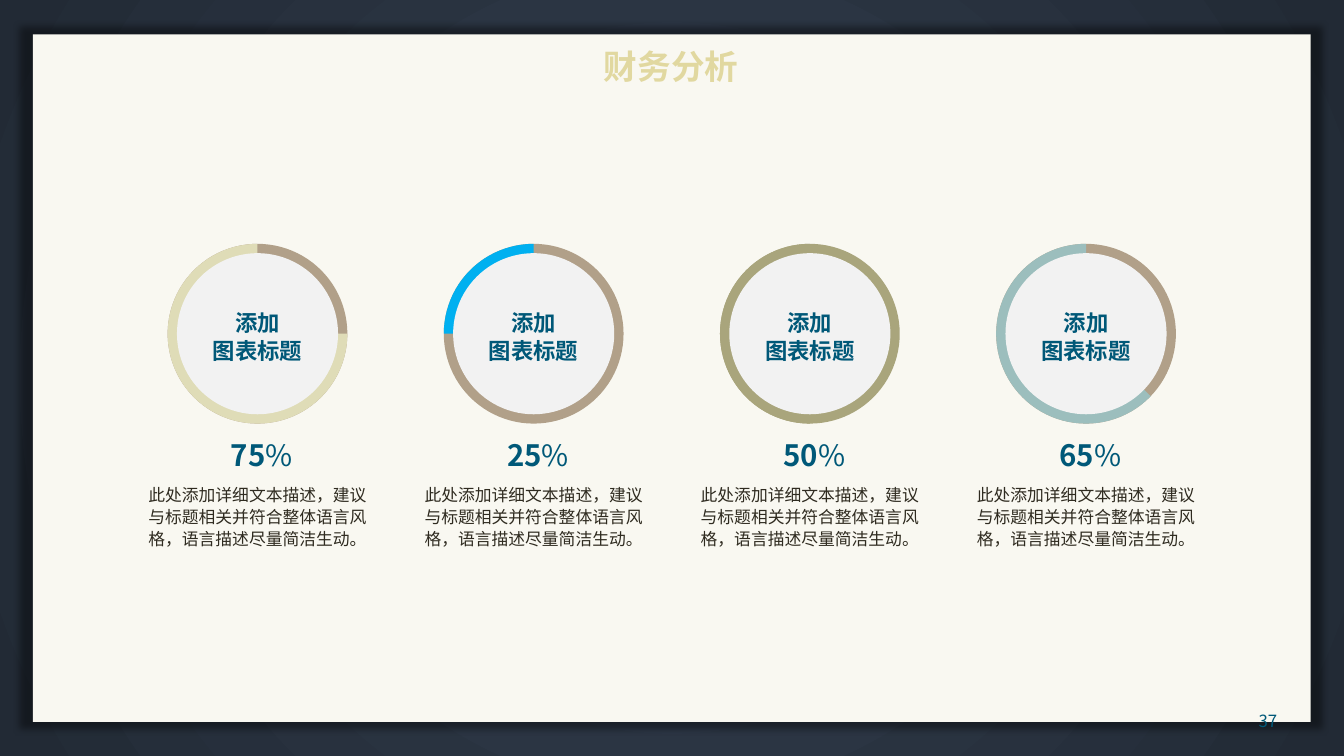
from lxml.etree import SubElement as Sub
from pptx import Presentation
from pptx.dml.color import RGBColor as RGB
from pptx.enum.shapes import MSO_SHAPE as Kind
from pptx.enum.text import MSO_ANCHOR as Anchor, MSO_AUTO_SIZE as Size, PP_ALIGN as Align
from pptx.oxml.ns import qn
from pptx.util import Cm, Pt

FACE = "Noto Sans CJK SC"
CREAM = RGB(0xF9, 0xF8, 0xF1)
TAUPE = RGB(0xB1, 0xA0, 0x89)
SAND = RGB(0xDF, 0xDC, 0xB7)
BLUE = RGB(0x00, 0xB0, 0xF0)
OLIVE = RGB(0xA9, 0xA5, 0x7C)
SAGE = RGB(0x9C, 0xBE, 0xBD)
PALE = RGB(0xF2, 0xF2, 0xF2)
TEAL = RGB(0x00, 0x58, 0x78)
INK = RGB(0x2F, 0x2B, 0x20)
SLATE = RGB(0x33, 0x3F, 0x50)
NIGHT = RGB(0x22, 0x2A, 0x35)
BRONZE = RGB(0x84, 0x70, 0x3F)
GOLD = RGB(0xE1, 0xD8, 0xA0)

DETAIL = "此处添加详细文本描述，建议与标题相关并符合整体语言风格，语言描述尽量简洁生动。"
RINGS = [("75", 0, SAND, TAUPE), ("25", 180, BLUE, TAUPE),
         ("50", 90, OLIVE, OLIVE), ("65", 44, SAGE, TAUPE)]
FIRST, PITCH, MID = 6.49, 6.96, 8.41
OUTER, INNER = 4.53, 4.06


def blend(fill, root, stops, angle=None):
    fill.gradient()
    grad = next(root.iter(qn("a:gradFill")))
    for child in list(grad):
        grad.remove(child)
    marks = Sub(grad, qn("a:gsLst"))
    for place, color in stops:
        mark = Sub(marks, qn("a:gs"), pos=str(place * 1000))
        Sub(mark, qn("a:srgbClr"), val=str(color))
    if angle is None:
        path = Sub(grad, qn("a:path"), path="circle")
        Sub(path, qn("a:fillToRect"), **{side: "50000" for side in "ltrb"})
    else:
        Sub(grad, qn("a:lin"), ang=str(angle * 60000), scaled="0")


def write(frame, text, size=12, color=TEAL, bold=False, align=Align.CENTER,
          anchor=Anchor.MIDDLE, inset=None, line=None, gap=0, tail=""):
    frame.word_wrap = True
    frame.auto_size = Size.NONE
    frame.vertical_anchor = anchor
    if inset is not None:
        frame.margin_left = frame.margin_right = inset
        frame.margin_top = frame.margin_bottom = inset
    for index, part in enumerate(text.split("\n")):
        para = frame.paragraphs[0] if index == 0 else frame.add_paragraph()
        para.alignment = align
        para.line_spacing = line
        para.space_before = Pt(gap if index else 0)
        for words, heavy in ((part, bold), (tail, False)):
            if words:
                run = para.add_run()
                run.text = words
                font = run.font
                font.size, font.bold, font.name = Pt(size), heavy, FACE
                font.color.rgb = color
                Sub(run._r.get_or_add_rPr(), qn("a:ea"), typeface=FACE)


class Deck:
    def __init__(self):
        self.show = Presentation()
        self.show.slide_width, self.show.slide_height = Cm(33.87), Cm(19.05)
        self.slide = self.show.slides.add_slide(self.show.slide_layouts[5])
        blend(self.slide.background.fill, self.slide.element,
              [(0, SLATE), (100, NIGHT)])

    def shape(self, kind, left, top, width, height, color):
        item = self.slide.shapes.add_shape(
            kind, Cm(left), Cm(top), Cm(width), Cm(height))
        item.shadow.inherit = False
        item.fill.solid()
        item.fill.fore_color.rgb = color
        item.line.fill.background()
        return item

    def panel(self):
        item = self.shape(Kind.RECTANGLE, 0.83, 0.87, 32.2, 17.32, CREAM)
        glow = Sub(item._element.spPr.find(qn("a:effectLst")), qn("a:outerShdw"),
                   blurRad=str(Pt(5)), sx="102000", sy="102000",
                   algn="ctr", rotWithShape="0")
        shade = Sub(glow, qn("a:srgbClr"), val="000000")
        Sub(shade, qn("a:alpha"), val="40000")

    def disc(self, x, width, color, kind=Kind.OVAL):
        return self.shape(kind, x - width / 2, MID - width / 2, width, width, color)

    def ring(self, x, start, color, base):
        self.disc(x, OUTER, base)
        arc = self.disc(x, OUTER, color, Kind.PIE)
        arc.adjustments[0] = start * 0.6
        arc.adjustments[1] = 270 * 0.6
        self.disc(x, INNER, PALE)

    def text(self, text, x, top, width, height, **style):
        box = self.slide.shapes.add_textbox(
            Cm(x - width / 2), Cm(top), Cm(width), Cm(height))
        write(box.text_frame, text, **style)

    def title(self, text):
        item = self.slide.shapes.title
        item.left, item.top, item.width, item.height = (
            Cm(1.42), Cm(1.02), Cm(30.99), Cm(1.27))
        write(item.text_frame, text, size=24, color=GOLD, bold=True)
        run = item.text_frame.paragraphs[0].runs[0]
        blend(run.font.fill, run._r,
              [(0, BRONZE), (60, GOLD), (100, BRONZE)], angle=60)
        self.slide.shapes._spTree.append(item._element)


def main():
    deck = Deck()
    deck.panel()
    for index, (share, start, color, base) in enumerate(RINGS):
        x = FIRST + index * PITCH
        deck.ring(x, start, color, base)
        deck.text(share, x + 0.11, 11, 4.22, 0.91, size=21, bold=True,
                  inset=0, tail="%")
        deck.text("添加\n图表标题", x, 7.92, INNER, 1.25, size=16, bold=True,
                  inset=0, line=0.8, gap=4)
        deck.text(DETAIL, x, 12.17, 5.72, 1.7, color=INK,
                  anchor=Anchor.TOP, inset=0, line=1.1)
    deck.text("37", 31.78, 17.65, 1.32, 1.02, align=Align.RIGHT)
    deck.title("财务分析")
    deck.show.save("out.pptx")


if __name__ == "__main__":
    main()
